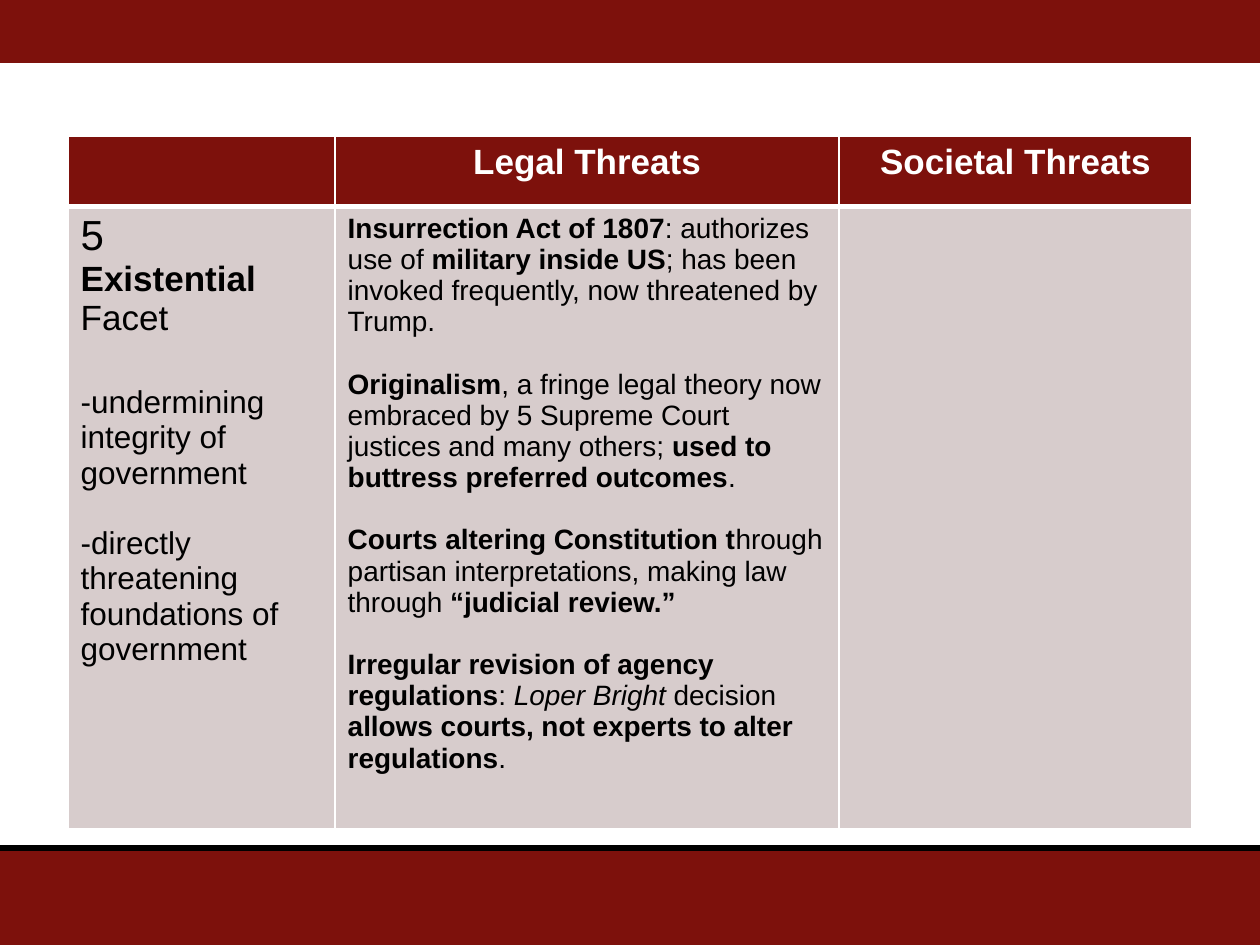
from lxml import etree
from pptx import Presentation
from pptx import util as u
from pptx.dml.color import RGBColor
from pptx.enum import shapes, text
from pptx.oxml.ns import qn

RED = RGBColor(0x7D, 0x11, 0x0C)
ROSE = RGBColor(0xD7, 0xCC, 0xCC)
BLACK = RGBColor(0, 0, 0)
WHITE = RGBColor(255, 255, 255)
PLAIN, BOLD, ITALIC = {"bold": False}, {"bold": True}, {"bold": False, "italic": True}

# A paragraph is (size, space before, runs); a run is (text, style).
HEADS = ["", "Legal Threats", "Societal Threats"]
FACET = [
    (24, 0, [("5", PLAIN)]),
    (20, 0, [("Existential", BOLD), (" Facet", PLAIN)]),
    (18, 27, [("-undermining integrity of government", PLAIN)]),
    (18, 20, [("-directly threatening foundations of government", PLAIN)]),
]
LEGAL = [
    [("Insurrection Act of 1807", BOLD), (": authorizes use of ", PLAIN),
     ("military inside US", BOLD),
     ("; has been invoked frequently, now threatened by Trump.", PLAIN)],
    [("Originalism", BOLD),
     (", a fringe legal theory now embraced by 5 Supreme Court justices "
      "and many others; ", PLAIN),
     ("used to buttress preferred outcomes", BOLD), (".", PLAIN)],
    [("Courts altering Constitution t", BOLD),
     ("hrough partisan interpretations, making law through ", PLAIN),
     ("“judicial review.”", BOLD)],
    [("Irregular revision of agency regulations", BOLD), (": ", PLAIN),
     ("Loper Bright", ITALIC), (" decision ", PLAIN),
     ("allows courts, not experts to alter regulations", BOLD), (".", PLAIN)],
]
BODY = [FACET, [(16, 18 if i else 0, runs) for i, runs in enumerate(LEGAL)], []]
COLS, ROWS = [2.12, 4, 2.8], [0.56, 4.94]
BANDS = [(0, 0.5), (6.75, 0.75)]


def edge(cell, widths):
    """Give the cell white borders; widths maps a side letter to points."""
    props = cell._tc.get_or_add_tcPr()
    for side, width in widths.items():
        line = etree.SubElement(props, qn("a:ln" + side), w=str(u.Pt(width)))
        fill = etree.SubElement(line, qn("a:solidFill"))
        etree.SubElement(fill, qn("a:srgbClr"), val=str(WHITE))


def paint(cell, color):
    cell.fill.solid()
    cell.fill.fore_color.rgb = color


def write(cell, paras, color, align):
    frame = cell.text_frame
    for i, (size, gap, runs) in enumerate(paras):
        para = frame.add_paragraph() if i else frame.paragraphs[0]
        para.alignment = align
        para.space_before = u.Pt(gap)
        for words, style in runs:
            run = para.add_run()
            run.text = words
            run.font.color.rgb = color
            look = {"name": "Arial", "size": u.Pt(size), **style}
            for key, value in look.items():
                setattr(run.font, key, value)


def main():
    prs = Presentation()
    prs.slide_width, prs.slide_height = u.Inches(10), u.Inches(7.5)
    slide = prs.slides.add_slide(prs.slide_layouts[6])

    for top, height in BANDS:
        band = slide.shapes.add_shape(shapes.MSO_SHAPE.RECTANGLE, 0, u.Inches(top),
                                      prs.slide_width, u.Inches(height))
        band.shadow.inherit = False
        band.fill.solid()
        band.fill.fore_color.rgb = RED
        band.line.fill.background()

    level = u.Inches(6.73)
    rule = slide.shapes.add_connector(shapes.MSO_CONNECTOR.STRAIGHT, 0, level,
                                      prs.slide_width, level)
    rule.line.color.rgb = BLACK
    rule.line.width = u.Pt(3.75)
    etree.SubElement(rule._element.spPr, qn("a:effectLst"))

    table = slide.shapes.add_table(
        len(ROWS), len(COLS), u.Inches(0.54), u.Inches(1.08),
        u.Inches(sum(COLS)), u.Inches(sum(ROWS))).table
    table.horz_banding = False
    for col, width in zip(table.columns, COLS):
        col.width = u.Inches(width)
    for row, height in zip(table.rows, ROWS):
        row.height = u.Inches(height)

    heads = [[(20, 0, [(head, BOLD)])] if head else [] for head in HEADS]
    looks = [(heads, RED, WHITE, text.PP_ALIGN.CENTER, {"L": 1, "R": 1, "T": 1, "B": 3}),
             (BODY, ROSE, BLACK, text.PP_ALIGN.LEFT, {"L": 1, "R": 1, "T": 3, "B": 1})]
    for row, (cells, fill, ink, align, widths) in zip(table.rows, looks):
        for cell, paras in zip(row.cells, cells):
            edge(cell, widths)
            paint(cell, fill)
            write(cell, paras, ink, align)

    prs.save("out.pptx")


if __name__ == "__main__":
    main()
